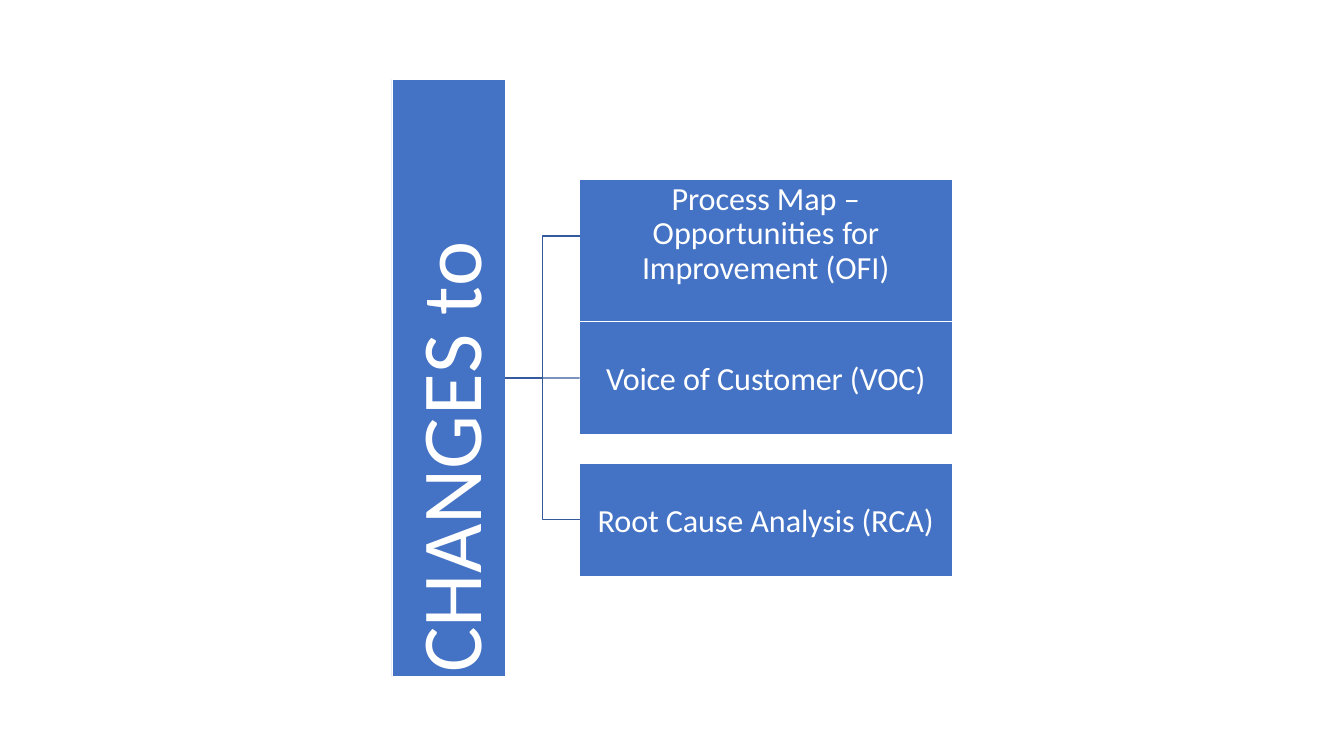
import pptx
import pptx.util
import pptx.dml.color
import pptx.enum.shapes
import pptx.enum.text
import pptx.oxml.ns
import lxml.etree

Pt = pptx.util.Pt
Kind = pptx.enum.shapes.MSO_CONNECTOR
Align = pptx.enum.text.PP_ALIGN
Anchor = pptx.enum.text.MSO_ANCHOR


class Board:
    hues = {"fill": "4472C4", "line": "34599C", "text": "FFFFFF"}
    font = "Calibri"

    def __init__(self, slide):
        self.slide = slide

    def hue(self, name):
        return pptx.dml.color.RGBColor.from_string(self.hues[name])

    def box(self, left, top, width, height):
        rect = self.slide.shapes.add_shape(
            pptx.enum.shapes.MSO_SHAPE.RECTANGLE,
            Pt(left), Pt(top), Pt(width), Pt(height))
        rect.shadow.inherit = False
        rect.fill.solid()
        rect.fill.fore_color.rgb = self.hue("fill")
        rect.line.color.rgb = self.hue("text")
        rect.line.width = Pt(0.25)
        return rect

    def text(self, rect, runs, size, align=Align.CENTER, anchor=Anchor.MIDDLE,
             space=None, side=0, top=0, base=0):
        frame = rect.text_frame
        frame.word_wrap = True
        frame.vertical_anchor = anchor
        frame.margin_left = frame.margin_right = Pt(side)
        frame.margin_top, frame.margin_bottom = Pt(top), Pt(base)
        para = frame.paragraphs[0]
        para.alignment = align
        para.line_spacing = space
        for words, track in runs:
            run = para.add_run()
            run.text = words
            run.font.name = self.font
            run.font.size = Pt(size)
            run.font.color.rgb = self.hue("text")
            run.font._element.set("spc", str(round(track * 100)))

    def turn(self, rect):
        rect.text_frame._txBody.bodyPr.set("vert", "vert270")

    def link(self, kind, start, end, root, leaf=None):
        line = self.slide.shapes.add_connector(
            kind, *(Pt(v) for v in start + end))
        line.begin_connect(root, 3)
        if leaf is not None:
            line.end_connect(leaf, 1)
        line.line.color.rgb = self.hue("line")
        line.line.width = Pt(1)
        lxml.etree.SubElement(
            line._element.spPr, pptx.oxml.ns.qn("a:effectLst"))


def main():
    deck = pptx.Presentation()
    deck.slide_width, deck.slide_height = Pt(960), Pt(540)
    board = Board(deck.slides.add_slide(deck.slide_layouts[6]))

    mid, step, high = 270, 101.25, 81
    bar_left, bar_wide, bar_high = 280, 81, 426.6
    left, wide = 414, 266

    bar = board.box(bar_left, mid - bar_high / 2, bar_wide, bar_high)
    board.turn(bar)
    title = [("CH", -0.1), ("AN", 0), ("G", -0.1), ("E", -0.6),
             ("S ", 0), ("t", -0.6), ("o", 0)]
    board.text(bar, title, 61, Align.LEFT, space=Pt(71.3), base=3)

    map_runs = [("Process Map ", -0.1), ("– Opportunities ", 0),
                ("for ", -0.2), ("Improvement ", -0.1), ("(OFI)", 0)]
    voice_runs = [("Voice ", -0.2), ("of ", 0), ("Customer (VOC)", -0.1)]
    root_runs = [("Root Cause Analysis (RCA)", -0.1)]
    tall = {"anchor": Anchor.TOP, "space": 0.9, "side": 40, "top": 2}
    items = [(map_runs, step, tall), (voice_runs, high, {}),
             (root_runs, high, {})]

    for row, (runs, deep, look) in enumerate(items):
        axis = mid + (row - 1) * step
        leaf = board.box(left, axis - high / 2, wide, deep)
        board.text(leaf, runs, 23, **look)
        kind = Kind.STRAIGHT if axis == mid else Kind.ELBOW
        board.link(kind, (bar_left + bar_wide, mid), (left, axis), bar,
                   leaf if deep == high else None)

    deck.save("out.pptx")


if __name__ == "__main__":
    main()
